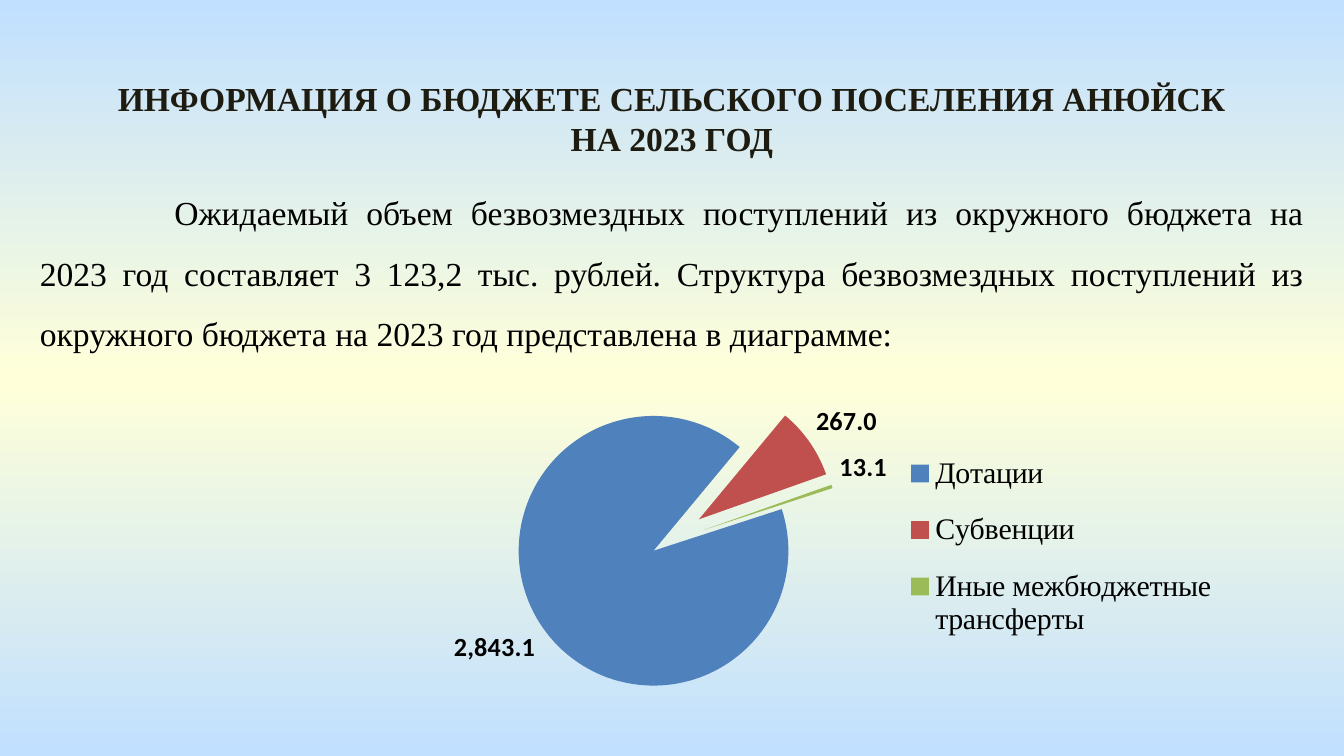
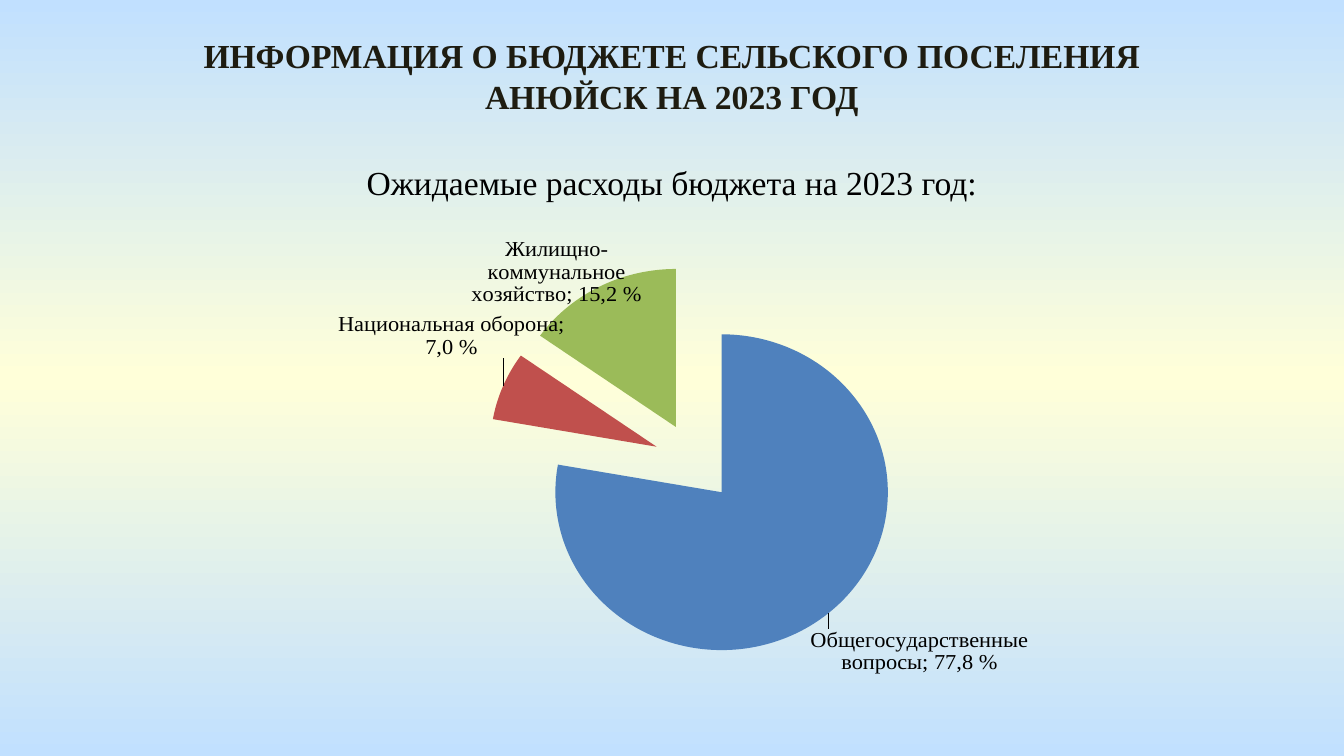
from copy import deepcopy

from lxml import etree
from pptx import Presentation
from pptx import util as u
from pptx.chart.data import CategoryChartData
from pptx.dml.color import RGBColor
from pptx.enum import chart as ch
from pptx.enum import text as t
from pptx.oxml.ns import qn

HUES = {"sky": "C1E0FF", "cream": "FFFFD9", "dark": "1E1C11", "black": "000000",
        "blue": "4F81BD", "red": "C0504D", "green": "9BBB59"}
SLICES = ("blue", "red", "green")
SERIF, SANS = "Times New Roman", "Calibri"
HEAD = "ИНФОРМАЦИЯ О БЮДЖЕТЕ СЕЛЬСКОГО ПОСЕЛЕНИЯ АНЮЙСК НА 2023 ГОД"


def hue(name):
    return RGBColor.from_string(HUES[name])


def style(font, size, face=SERIF, color="black", bold=False):
    font.size, font.name, font.bold = u.Pt(size), face, bold
    font.color.rgb = hue(color)


def write(frame, words, size=18, color="black", bold=False, align="CENTER",
          space=1.0, indent=0):
    para = frame.paragraphs[0]
    para.alignment = t.PP_ALIGN[align]
    para.line_spacing = space
    para.space_before = u.Pt(0)
    props = para._p.get_or_add_pPr()
    props.set("marL", "0")
    props.set("indent", str(u.Cm(indent)))
    etree.SubElement(props, qn("a:buNone"))
    run = para.add_run()
    run.text = words
    style(run.font, size, color=color, bold=bold)


def node(tag, value):
    item = etree.Element(qn(tag))
    item.set("val", str(value))
    return item


def lay(host, index, **parts):
    for old in host.findall(qn("c:layout")):
        host.remove(old)
    layout = etree.Element(qn("c:layout"))
    manual = etree.SubElement(layout, qn("c:manualLayout"))
    for key, value in parts.items():
        manual.append(node("c:" + key, value))
    host.insert(index, layout)


def frame(x, y, w, h):
    return dict(layoutTarget="inner", xMode="edge", yMode="edge", x=x, y=y, w=w, h=h)


class Deck:
    def __init__(self):
        self.prs = Presentation()
        self.prs.slide_width, self.prs.slide_height = u.Cm(25.4), u.Cm(14.29)
        self.slide = None
        self.paint()

    def paint(self):
        master = self.prs.slide_master
        fill = master.background.fill
        fill.gradient()
        fill.gradient_angle = 270
        for stop, name, place in zip(fill.gradient_stops, ("sky", "cream"), (0, 0.5)):
            stop.color.rgb = hue(name)
            stop.position = place
        stops = next(master.element.iter(qn("a:gsLst")))
        last = deepcopy(stops[0])
        last.set("pos", "100000")
        stops.append(last)

    def page(self):
        self.slide = self.prs.slides.add_slide(self.prs.slide_layouts[1])

    def place(self, holder, box, words, **form):
        holder.left, holder.top, holder.width, holder.height = map(u.Cm, box)
        holder.text_frame.word_wrap = True
        holder.text_frame.auto_size = t.MSO_AUTO_SIZE.SHAPE_TO_FIT_TEXT
        write(holder.text_frame, words, **form)

    def title(self, box):
        self.place(self.slide.shapes.title, box, HEAD, color="dark", bold=True)

    def body(self, box, words, **form):
        self.place(self.slide.placeholders[1], box, words, **form)

    def pie(self, box, rows, burst, first, area, form, turn=0):
        data = CategoryChartData(number_format=form)
        data.categories = [name for name, _ in rows]
        data.add_series("Series 1", [value for _, value in rows])
        chart = self.slide.shapes.add_chart(
            ch.XL_CHART_TYPE.PIE, *map(u.Cm, box), data).chart
        chart.has_title = chart.has_legend = False
        style(chart.font, 18, SANS)
        plot = chart.plots[0]
        plot.vary_by_categories = True
        series = plot.series[0]
        for index, name in enumerate(SLICES):
            fill = series.points[index].format.fill
            fill.solid()
            fill.fore_color.rgb = hue(name)
        root = chart.element
        point = next(root.iter(qn("c:dPt")))
        point.addprevious(node("c:explosion", burst))
        if first != burst:
            point.find(qn("c:spPr")).addprevious(node("c:explosion", first))
        next(root.iter(qn("c:pieChart"))).append(node("c:firstSliceAng", turn))
        lay(next(root.iter(qn("c:plotArea"))), 0, **frame(*area))
        labels = series.data_labels
        labels.show_value = True
        labels.number_format, labels.number_format_is_linked = form, False
        labels.position = ch.XL_LABEL_POSITION.OUTSIDE_END
        return chart, series

    def legend(self, chart, x, y, w, h):
        chart.has_legend = True
        key = chart.legend
        key.position = ch.XL_LEGEND_POSITION.RIGHT
        key.include_in_layout = False
        style(key.font, 16)
        lay(next(chart.element.iter(qn("c:legend"))), 1,
            xMode="edge", yMode="edge", x=x, y=y, w=w, h=h)

    def notes(self, chart, series, rows, shifts):
        style(series.data_labels.font, 12)
        series.data_labels.show_category_name = True
        for index, (name, value) in enumerate(rows):
            label = series.points[index].data_label
            share = f"{value * 100:.1f}".replace(".", ",")
            write(label.text_frame, f"{name}; {share} %", size=12)
            label.position = ch.XL_LABEL_POSITION.OUTSIDE_END
        for item, (x, y) in zip(chart.element.iter(qn("c:dLbl")), shifts):
            lay(item, 1, x=x, y=y)


def income(deck):
    deck.page()
    deck.title((1.9, 1.33, 21.6, 1.8))
    deck.body((0.5, 3.12, 24.4, 3.7),
              "Ожидаемый объем безвозмездных поступлений из окружного бюджета "
              "на 2023 год составляет 3 123,2 тыс. рублей. Структура безвозмездных "
              "поступлений из окружного бюджета на 2023 год представлена в диаграмме:",
              align="JUSTIFY", space=1.5, indent=2.54)
    rows = [("Дотации", 2843.1), ("Субвенции", 267),
            ("Иные межбюджетные трансферты", 13.1)]
    chart, series = deck.pie((2.24, 6.93, 20.96, 6.68), rows, 31, 10,
                             (0.32, 0, 0.345, 1), "#,##0.0", turn=72)
    style(series.data_labels.font, 14, SANS, bold=True)
    deck.legend(chart, 0.71, 0.19, 0.28, 0.64)


def costs(deck):
    deck.page()
    deck.title((2.3, 0.53, 20.8, 1.8))
    deck.body((3.25, 2.93, 18.9, 1.02), "Ожидаемые расходы бюджета на 2023 год:")
    rows = [("Общегосударственные вопросы", 0.778), ("Национальная оборона", 0.07),
            ("Жилищно-коммунальное хозяйство", 0.152)]
    chart, series = deck.pie((1.83, 4.01, 21.74, 9.7), rows, 25, 25,
                             (0.1, 0.055, 0.84, 0.81), "0.0%")
    deck.notes(chart, series, rows, ((-0.02, 0.02), (0.06, -0.05), (0.04, 0.04)))


def main():
    deck = Deck()
    income(deck)
    costs(deck)
    deck.prs.save("out.pptx")


if __name__ == "__main__":
    main()
